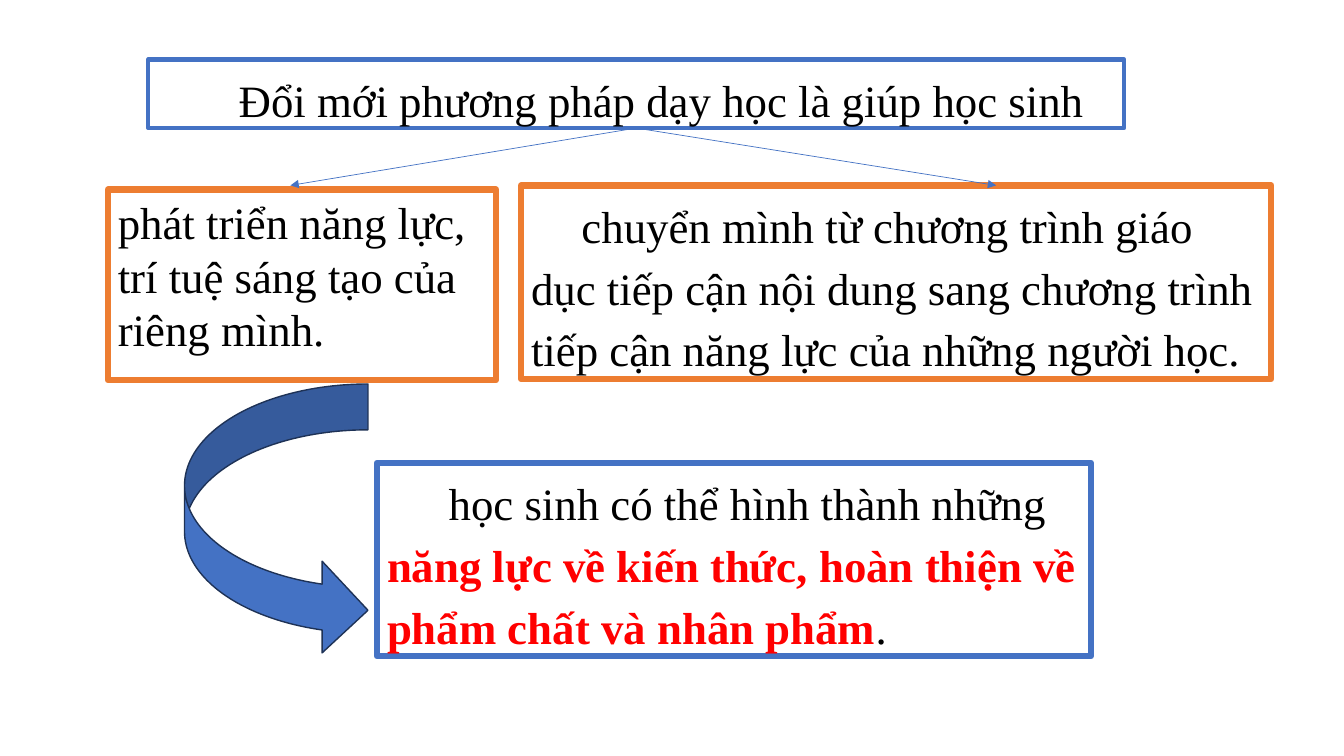
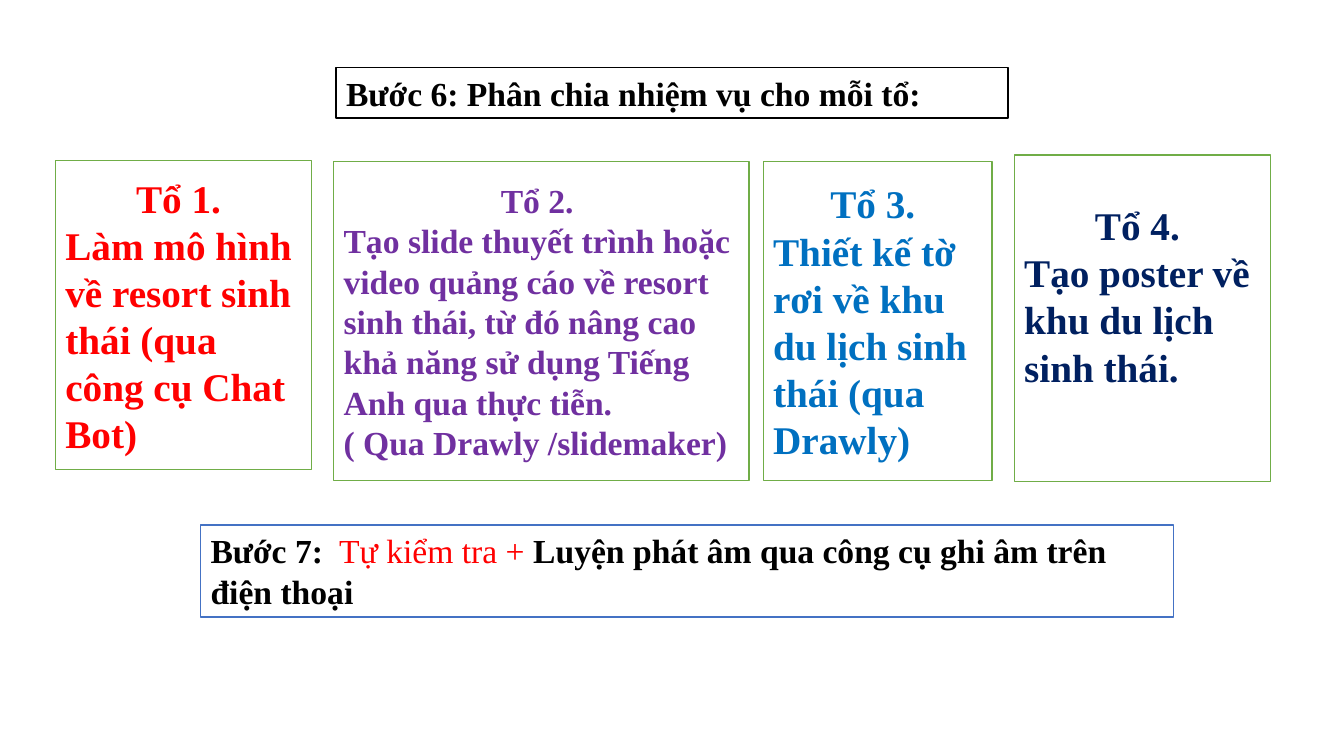
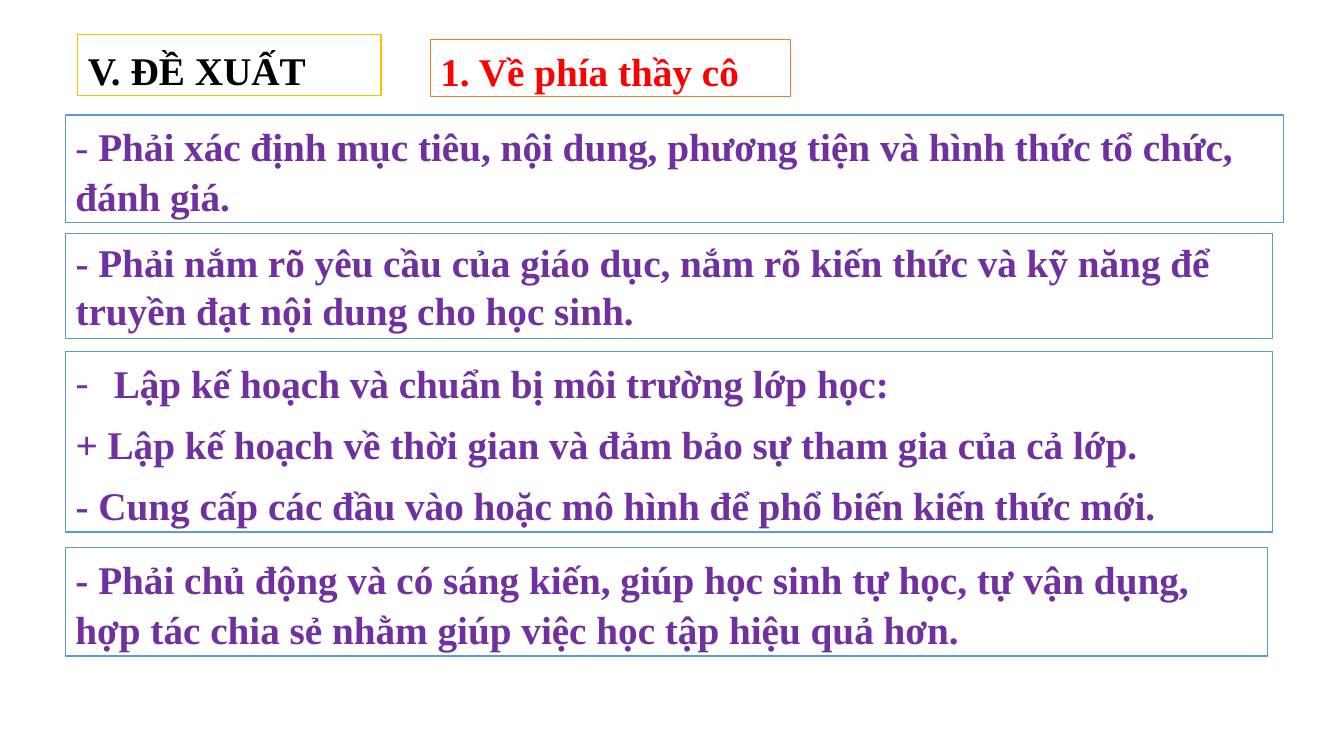
from lxml.etree import SubElement
from pptx import Presentation
from pptx.dml.color import RGBColor
from pptx.enum.shapes import MSO_CONNECTOR, MSO_SHAPE
from pptx.enum.text import MSO_ANCHOR, MSO_AUTO_SIZE, PP_ALIGN
from pptx.oxml.ns import qn
from pptx.util import Inches, Pt

BLACK = RGBColor(0x00, 0x00, 0x00)
WHITE = RGBColor(0xFF, 0xFF, 0xFF)
RED = RGBColor(0xFF, 0x00, 0x00)
PURPLE = RGBColor(0x70, 0x30, 0xA0)
SKY = RGBColor(0x00, 0x70, 0xC0)
NAVY = RGBColor(0x00, 0x20, 0x60)
BLUE = RGBColor(0x44, 0x72, 0xC4)
DARK_BLUE = RGBColor(0x1E, 0x32, 0x56)
LIGHT_BLUE = RGBColor(0x5B, 0x9B, 0xD5)
ORANGE = RGBColor(0xED, 0x7D, 0x31)
GREEN = RGBColor(0x70, 0xAD, 0x47)
GOLD = RGBColor(0xFF, 0xC0, 0x00)

FONT = "Times New Roman"
TITLE_ONLY = 5


def write(shape, text, size=28, colour=BLACK, bold=False, align=PP_ALIGN.LEFT,
          spacing=1.0, after=0, indent=0, hanging=0, bullet=None):
    """Add a paragraph; text is a string or a list of (text, colour, bold)."""
    frame = shape.text_frame
    paragraph = frame.paragraphs[0]
    if paragraph.runs:
        paragraph = frame.add_paragraph()
    paragraph.alignment = align
    paragraph.line_spacing = spacing
    paragraph.space_before = Pt(0)
    paragraph.space_after = Pt(after)
    properties = paragraph._p.get_or_add_pPr()
    properties.set("marL", str(Inches(hanging)))
    properties.set("indent", str(Inches(indent - hanging)))
    if bullet:
        SubElement(properties, qn("a:buFont"), typeface=FONT)
        SubElement(properties, qn("a:buChar"), char=bullet)
    parts = [(text, colour, bold)] if isinstance(text, str) else text
    for part, part_colour, part_bold in parts:
        run = paragraph.add_run()
        run.text = part
        run.font.name = FONT
        run.font.size = Pt(size)
        run.font.bold = part_bold
        run.font.color.rgb = part_colour


class Deck:
    """Holds the style and the current slide; lengths are percent of the slide."""

    def __init__(self):
        self.presentation = Presentation()
        self.presentation.slide_width = Inches(13.33)
        self.presentation.slide_height = Inches(7.5)
        self.slide = None

    def across(self, share):
        return round(self.presentation.slide_width * share / 100)

    def down(self, share):
        return round(self.presentation.slide_height * share / 100)

    def place(self, left, top, width, height):
        return (self.across(left), self.down(top),
                self.across(width), self.down(height))

    def outline(self, shape, fill, line, weight):
        shape.fill.solid()
        shape.fill.fore_color.rgb = fill
        shape.line.color.rgb = line
        shape.line.width = Pt(weight)

    def frame(self, shape, line, weight, anchor=MSO_ANCHOR.TOP):
        self.outline(shape, WHITE, line, weight)
        text_frame = shape.text_frame
        text_frame.word_wrap = True
        text_frame.auto_size = MSO_AUTO_SIZE.NONE
        text_frame.vertical_anchor = anchor

    def titled_slide(self, area, text, line, weight=1, **text_format):
        layout = self.presentation.slide_layouts[TITLE_ONLY]
        self.slide = self.presentation.slides.add_slide(layout)
        title = self.slide.shapes.title
        title.left, title.top, title.width, title.height = self.place(*area)
        self.frame(title, line, weight)
        write(title, text, **text_format)
        return title

    def shape(self, kind, area):
        shape = self.slide.shapes.add_shape(kind, *self.place(*area))
        shape.shadow.inherit = False
        return shape

    def box(self, area, line, weight=1, anchor=MSO_ANCHOR.TOP):
        box = self.shape(MSO_SHAPE.RECTANGLE, area)
        self.frame(box, line, weight, anchor)
        return box

    def text_box(self, area, text, line, weight=1, **text_format):
        write(self.box(area, line, weight), text, **text_format)

    def curved_arrow(self, area):
        arrow = self.shape(MSO_SHAPE.CURVED_RIGHT_ARROW, area)
        self.outline(arrow, BLUE, DARK_BLUE, 1)

    def arrow_from(self, source, end_x, end_y):
        """Draw an arrow from the bottom of a shape to a point."""
        arrow = self.slide.shapes.add_connector(
            MSO_CONNECTOR.STRAIGHT, 0, 0, self.across(end_x), self.down(end_y))
        arrow.begin_connect(source, 2)
        arrow.line.color.rgb = BLUE
        arrow.line.width = Pt(0.5)
        SubElement(arrow.line._get_or_add_ln(), qn("a:tailEnd"), type="triangle")
        SubElement(arrow._element.spPr, qn("a:effectLst"))


def teaching_method_slide(deck):
    body = dict(size=32, spacing=1.15, after=8, indent=0.5)
    title = deck.titled_slide(
        (11.03, 7.87, 72.62, 9.07), "Đổi mới phương pháp dạy học là giúp học sinh",
        BLUE, 3, align=PP_ALIGN.CENTER, **body)
    deck.text_box((8.03, 25.07, 28.88, 25.2),
                  "phát triển năng lực, trí tuệ sáng tạo của riêng mình.",
                  ORANGE, 4.5, size=32)
    deck.text_box((28.06, 61.2, 53.11, 25.6), [
        (" học sinh có thể hình thành những ", BLACK, False),
        ("năng lực về kiến thức, hoàn thiện về phẩm chất và nhân phẩm", RED, True),
        (".", BLACK, False)], BLUE, 4.5, **body)
    deck.text_box((38.78, 24.53, 55.81, 25.6),
                  "chuyển mình từ chương trình giáo dục tiếp cận nội dung sang "
                  "chương trình tiếp cận năng lực của những người học.",
                  ORANGE, 4.5, **body)
    for end_x in (21.61, 74.12):
        deck.arrow_from(title, end_x, 24.53)
    deck.curved_arrow((13.73, 50.8, 13.65, 36))


def group_tasks_slide(deck):
    deck.titled_slide((25, 8.93, 50, 6.67), "Bước 6: Phân chia nhiệm vụ cho mỗi tổ:",
                      BLACK, size=24, bold=True)
    groups = [
        ((4.13, 21.2, 19.05, 40.93), RED, 28, 0.05,
         ["Làm mô hình về resort sinh thái (qua công cụ Chat Bot)"]),
        ((24.83, 21.33, 30.91, 42.27), PURPLE, 24, 0.05,
         ["Tạo slide thuyết trình hoặc video quảng cáo về resort sinh thái, "
          "từ đó nâng cao khả năng sử dụng Tiếng Anh qua thực tiễn.",
          "( Qua Drawly /slidemaker)"]),
        ((56.79, 21.33, 17.03, 42.27), SKY, 28, 0.05,
         ["Thiết kế tờ rơi về khu du lịch sinh thái (qua Drawly)"]),
        ((75.47, 20.53, 19.05, 43.2), NAVY, 28, 0.5,
         ["Tạo poster về khu du lịch sinh thái."]),
    ]
    for number, (area, colour, size, bottom, tasks) in enumerate(groups, 1):
        box = deck.box(area, GREEN, anchor=MSO_ANCHOR.MIDDLE)
        box.text_frame.margin_bottom = Inches(bottom)
        text_format = dict(size=size, colour=colour, bold=True)
        write(box, f"Tổ {number}. ", align=PP_ALIGN.CENTER, **text_format)
        for task in tasks:
            write(box, task, **text_format)
    deck.text_box((14.93, 69.47, 72.39, 12.13), [
        ("Bước 7: ", BLACK, True),
        (" Tự kiểm tra + ", RED, False),
        ("Luyện phát âm qua công cụ ghi âm trên điện thoại", BLACK, True)],
        BLUE, size=24)


def proposals_slide(deck):
    loose = dict(spacing=1.06, after=8)
    proposal = dict(colour=PURPLE, bold=True)
    left = 4.88
    deck.titled_slide((5.78, 4.53, 22.58, 8.13), "V. ĐỀ XUẤT", GOLD, bold=True,
                      align=PP_ALIGN.JUSTIFY, spacing=1.15, after=8)
    deck.text_box((32.03, 5.2, 26.78, 7.6), "1. Về phía thầy cô", ORANGE,
                  colour=RED, bold=True, **loose)
    deck.text_box((left, 15.2, 90.62, 14.27), [
        ("- ", PURPLE, False),
        ("Phải xác định mục tiêu, nội dung, phương tiện và hình thức tổ chức, "
         "đánh giá.", PURPLE, True)], LIGHT_BLUE, **loose)
    deck.text_box((left, 30.93, 89.8, 13.87),
                  "- Phải nắm rõ yêu cầu của giáo dục, nắm rõ kiến thức và kỹ năng "
                  "để truyền đạt nội dung cho học sinh.", LIGHT_BLUE, **proposal)
    plan = deck.box((left, 46.53, 89.8, 23.87), LIGHT_BLUE)
    write(plan, "Lập kế hoạch và chuẩn bị môi trường lớp học:",
          hanging=0.38, bullet="-", **proposal, **loose)
    for step in ("+ Lập kế hoạch về thời gian và đảm bảo sự tham gia của cả lớp.",
                 "- Cung cấp các đầu vào hoặc mô hình để phổ biến kiến thức mới."):
        write(plan, step, **proposal, **loose)
    deck.text_box((left, 72.4, 89.42, 14.4),
                  "- Phải chủ động và có sáng kiến, giúp học sinh tự học, tự vận dụng, "
                  "hợp tác chia sẻ nhằm giúp việc học tập hiệu quả hơn.",
                  LIGHT_BLUE, **proposal, **loose)


def main():
    deck = Deck()
    teaching_method_slide(deck)
    group_tasks_slide(deck)
    proposals_slide(deck)
    deck.presentation.save("out.pptx")


if __name__ == "__main__":
    main()
